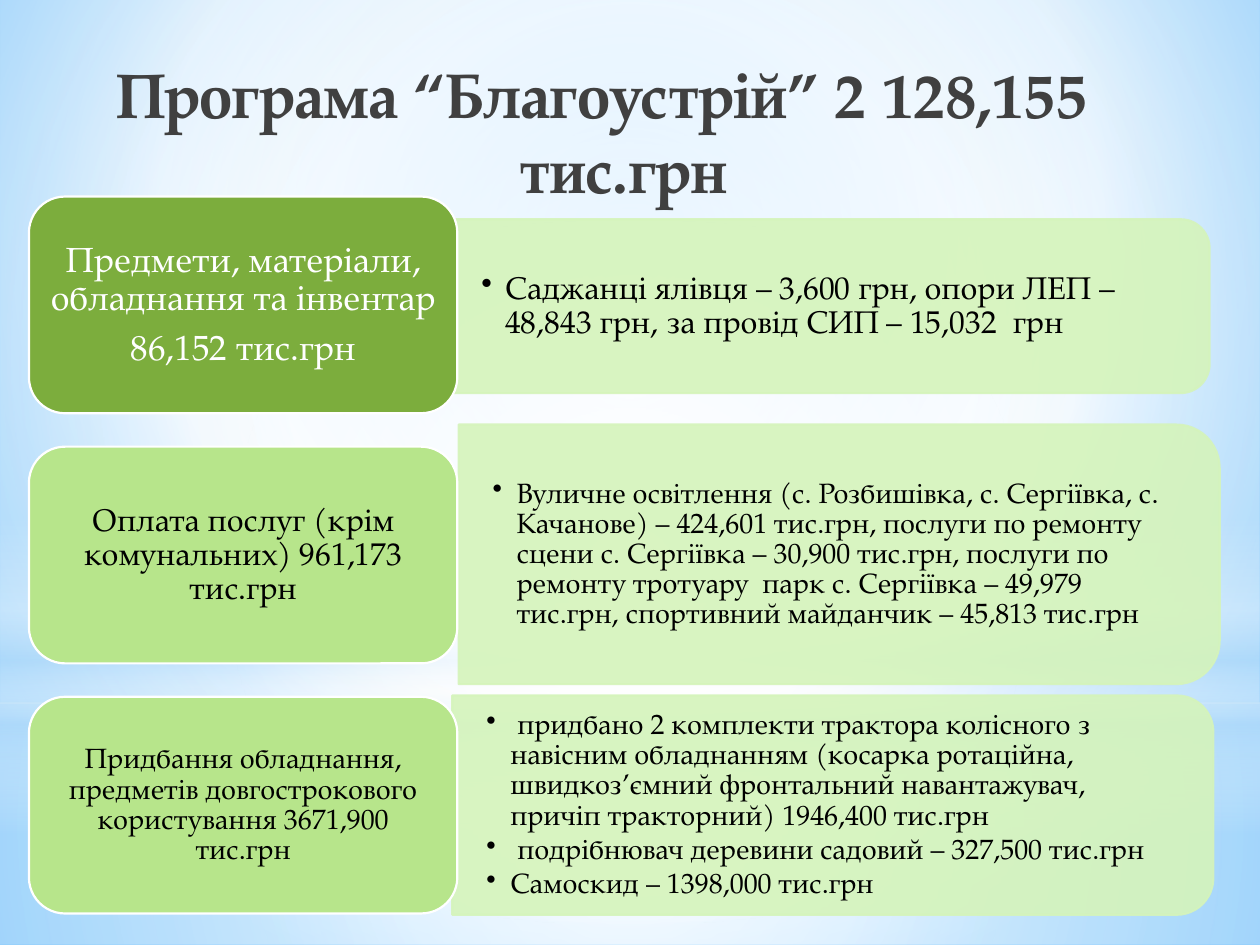
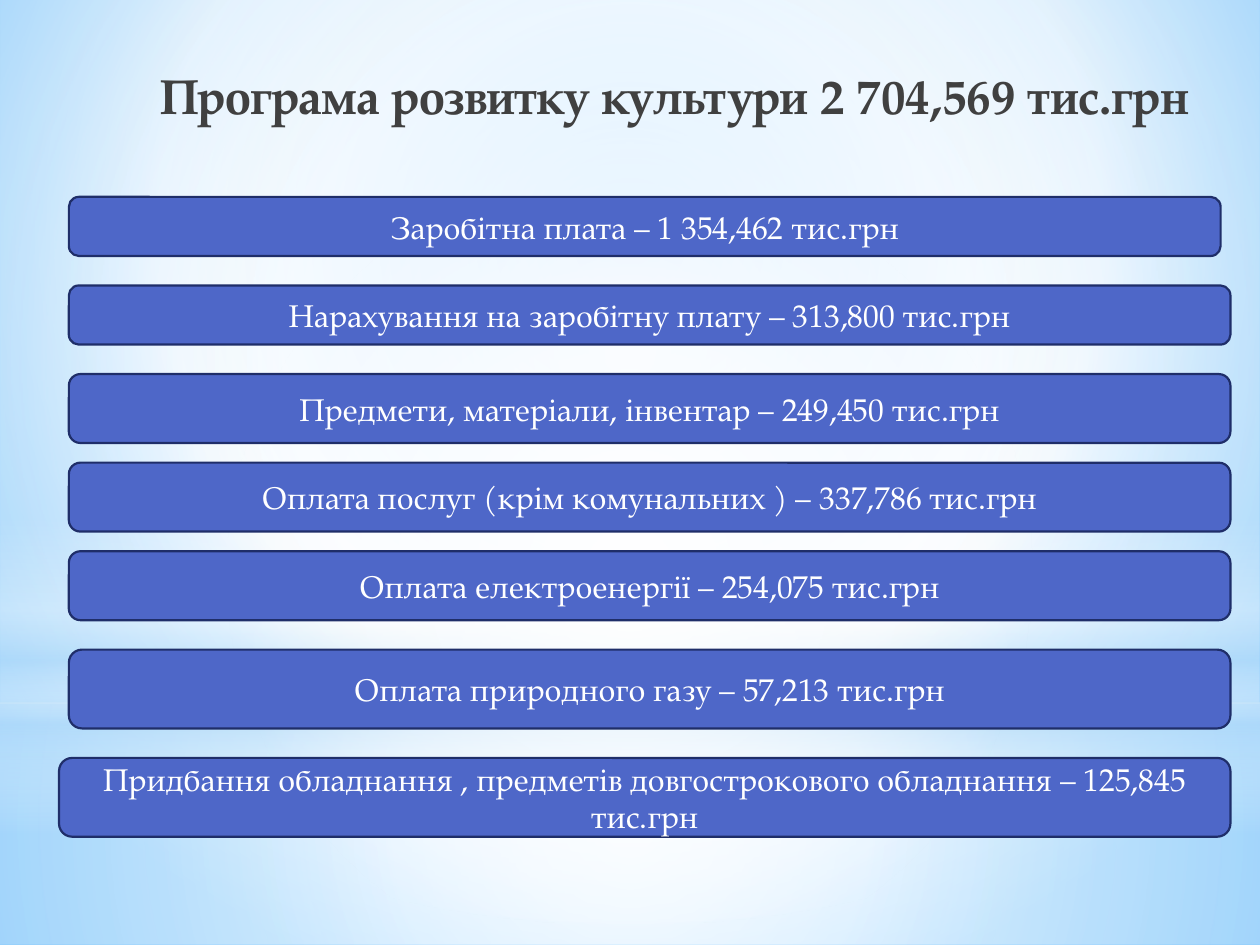
from lxml import etree
from pptx import Presentation
from pptx import util as u
from pptx.dml import color
from pptx.enum import shapes, text
from pptx.oxml import ns

# ---- Content ----
PROGRAM_TITLE = "Програма “Благоустрій” 2 128,155 тис.грн"
# label, label size, label fill, label colour, card (left, top, width, height), card size, bullets
PROGRAM_ROWS = [
    (["Предмети, матеріали, обладнання та інвентар", "86,152 тис.грн"],
     20, "7CAD3D", "FFFFFF", (3.55, 1.74, 6.05, 1.38), 18,
     ["Саджанці ялівця – 3,600 грн, опори ЛЕП – 48,843 грн, за провід СИП – 15,032  грн"]),
    (["Оплата послуг (крім комунальних) 961,173 тис.грн"],
     18, "B7E58B", "000000", (3.64, 3.37, 6.04, 2.06), 16,
     ["Вуличне освітлення (с. Розбишівка, с. Сергіївка, с. Качанове) – 424,601 тис.грн, "
      "послуги по ремонту сцени с. Сергіївка – 30,900 тис.грн, послуги по ремонту "
      "тротуару  парк с. Сергіївка – 49,979 тис.грн, спортивний майданчик – 45,813 тис.грн"]),
    (["Придбання обладнання, предметів довгострокового користування 3671,900 тис.грн"],
     16, "B7E58B", "000000", (3.59, 5.52, 6.04, 1.74), 16,
     [" придбано 2 комплекти трактора колісного з навісним обладнанням (косарка ротаційна, "
      "швидкоз’ємний фронтальний навантажувач, причіп тракторний) 1946,400 тис.грн",
      " подрібнювач деревини садовий – 327,500 тис.грн",
      "Самоскид – 1398,000 тис.грн"]),
]

CULTURE_TITLE = "Програма розвитку культури 2 704,569 тис.грн"
# text, then left, top, right and height in grid cells
CULTURE_BARS = [
    ("Заробітна плата – 1 354,462 тис.грн", 7, 20, 124, 6),
    ("Нарахування на заробітну плату – 313,800 тис.грн", 7, 29, 125, 6),
    ("Предмети, матеріали, інвентар – 249,450 тис.грн", 7, 38, 125, 7),
    ("Оплата послуг (крім комунальних ) – 337,786 тис.грн", 7, 47, 125, 7),
    ("Оплата електроенергії – 254,075 тис.грн", 7, 56, 125, 7),
    ("Оплата природного газу – 57,213 тис.грн", 7, 66, 125, 8),
    ("Придбання обладнання , предметів довгострокового обладнання – 125,845 тис.грн",
     6, 77, 125, 8),
]

# ---- Shared look ----
WIDTH, HEIGHT = 10, 7.5
CELL = WIDTH / 128
FONT = "TeX Gyre Pagella"
TITLE_COLOR, CARD_COLOR, WHITE = "404040", "D5F4BB", "FFFFFF"
BAR_COLOR, BAR_LINE = "4E67C8", "1F2E69"
LABEL_BOX, LABEL_STEP = (0.23, 1.56, 3.4, 1.72), 1.985
CENTER, RIGHT, LEFT = text.PP_ALIGN.CENTER, text.PP_ALIGN.RIGHT, text.PP_ALIGN.LEFT
KIND = shapes.MSO_SHAPE

# Gradient stops are (position, colour, opacity) in percent
PAGE_STOPS = [(0, "9ED5FF", 100), (60, WHITE, 100), (100, "5BB9FF", 100)]
PAGE_FOCUS, MIDDLE = (20, 10, 20, 60), (50, 50, 50, 50)
BACKDROP = [
    (KIND.RECTANGLE, (0, 5.58, WIDTH, 1.92), MIDDLE,
     [(0, WHITE, 91), (37, WHITE, 76), (100, "B4DCFA", 79)]),
    (KIND.RECTANGLE, (0, 0, WIDTH, 5.58), MIDDLE,
     [(0, WHITE, 89), (48, WHITE, 62), (100, "B4DCFA", 79)]),
    (KIND.RECTANGLE, (0, 4.12, WIDTH, 2.5), None,
     [(0, WHITE, 0), (29, WHITE, 30), (45, "B4DCFA", 40), (55, WHITE, 26),
      (65, "B4DCFA", 60), (100, WHITE, 0)]),
    (KIND.OVAL, (0, 1.75, WIDTH, 5.58), MIDDLE, [(0, WHITE, 100), (56, WHITE, 0)]),
]


def inches(box):
    return [u.Inches(v) for v in box]


def add(parent, tag, **attrs):
    return etree.SubElement(parent, ns.qn(tag), {k: str(v) for k, v in attrs.items()})


def paint(fill, hex_color, opacity=100):
    fill.solid()
    fill.fore_color.rgb = color.RGBColor.from_string(hex_color)
    if opacity < 100:
        for clr in fill._xPr.iter(ns.qn("a:srgbClr")):
            add(clr, "a:alpha", val=opacity * 1000)


def gradient(parent, stops, focus):
    """Swap the empty fill of parent for a gradient: circular, or top-down without focus."""
    empty = parent.find(ns.qn("a:noFill"))
    grad = etree.Element(ns.qn("a:gradFill"), rotWithShape="1")
    stop_list = add(grad, "a:gsLst")
    for pos, hex_color, opacity in stops:
        clr = add(add(stop_list, "a:gs", pos=pos * 1000), "a:srgbClr", val=hex_color)
        add(clr, "a:alpha", val=opacity * 1000)
    if focus:
        sides = {k: v * 1000 for k, v in zip("ltrb", focus)}
        add(add(grad, "a:path", path="circle"), "a:fillToRect", **sides)
    else:
        add(grad, "a:lin", ang=90 * 60000, scaled=0)
    parent.replace(empty, grad)


def add_shape(s, kind, box, fill=None, line=None, opacity=100):
    sp = s.shapes.add_shape(kind, *inches(box))
    sp.shadow.inherit = False
    if fill:
        paint(sp.fill, fill, opacity)
    else:
        sp.fill.background()
    if line:
        sp.line.width = u.Pt(1.25)
        paint(sp.line.fill, line, opacity)
    else:
        sp.line.fill.background()
    return sp


def write(sp, lines, size, hex_color, align=CENTER, bold=False, anchor="MIDDLE",
          inset=(0.1, 0.05), spacing=1.0, after=0.0, hang=0.0, bullet=None):
    tf = sp.text_frame
    frame = {"word_wrap": True, "vertical_anchor": text.MSO_ANCHOR[anchor],
             "margin_left": u.Inches(inset[0]), "margin_right": u.Inches(inset[0]),
             "margin_top": u.Inches(inset[1]), "margin_bottom": u.Inches(inset[1])}
    for name, value in frame.items():
        setattr(tf, name, value)
    for i, line in enumerate(lines):
        p = tf.add_paragraph() if i else tf.paragraphs[0]
        for name, value in {"alignment": align, "line_spacing": spacing,
                            "space_after": u.Pt(size * after)}.items():
            setattr(p, name, value)
        pPr = p._p.get_or_add_pPr()
        if hang:
            pPr.set("marL", str(u.Inches(hang)))
            pPr.set("indent", str(-u.Inches(hang)))
        if bullet:
            add(pPr, "a:buChar", char=bullet)
        r = p.add_run()
        r.text = line
        for name, value in {"name": FONT, "size": u.Pt(size), "bold": bold}.items():
            setattr(r.font, name, value)
        paint(r.font.fill, hex_color)


def add_text(s, box, lines, size, hex_color, **style):
    write(s.shapes.add_textbox(*inches(box)), lines, size, hex_color, **style)


def add_title(s, box, title, size, align):
    add_text(s, box, [title], size, TITLE_COLOR, align=align, bold=True,
             anchor="TOP", hang=0.35)


def dress_master(master, s):
    """Give the master its background and the soft light shapes, drawn on s first."""
    master.background.fill.background()
    gradient(master.element.find(".//" + ns.qn("p:bgPr")), PAGE_STOPS, PAGE_FOCUS)
    tree = master.shapes._spTree
    for i, (kind, box, focus, stops) in enumerate(BACKDROP):
        sp = add_shape(s, kind, box)
        gradient(sp._element.spPr, stops, focus)
        sp._element.nvSpPr.cNvPr.set("id", str(20 + i))
        tree.insert(2 + i, sp._element)


def program_slide(s):
    add_title(s, (0.47, 0.39, 8.61, 1.33), PROGRAM_TITLE, 36, CENTER)
    for i, row in enumerate(PROGRAM_ROWS):
        label, label_size, label_fill, label_color, card, card_size, bullets = row
        # Card: a shape turned by 90 degrees around its centre
        x, y, w, h = card
        turned = (x + (w - h) / 2, y + (h - w) / 2, h, w)
        sp = add_shape(s, KIND.ROUND_2_SAME_RECTANGLE, turned, CARD_COLOR, CARD_COLOR, 90)
        sp.rotation = 90
        add_text(s, (x, y + 0.05 * h, w - 0.05 * h, 0.9 * h), bullets, card_size, "000000",
                 align=LEFT, inset=(0.27, 0.14), spacing=0.9, after=0.15,
                 hang=0.19, bullet="•")
        # Label on the left
        x, y, w, h = LABEL_BOX
        y += i * LABEL_STEP
        add_shape(s, KIND.ROUNDED_RECTANGLE, (x, y, w, h), label_fill, WHITE)
        pad = 0.05 * h
        add_text(s, (x + pad, y + pad, w - 2 * pad, h - 2 * pad), label, label_size,
                 label_color, inset=(0.08, 0.04), spacing=0.9, after=0.35)


def culture_slide(s):
    add_title(s, (0.31, 0.47, 9.22, 0.7), CULTURE_TITLE, 28, RIGHT)
    for line, left, top, right, rows in CULTURE_BARS:
        box = [n * CELL for n in (left, top, right - left, rows)]
        sp = add_shape(s, KIND.ROUNDED_RECTANGLE, box, BAR_COLOR, BAR_LINE)
        write(sp, [line], 18, WHITE)


def main():
    prs = Presentation()
    prs.slide_width, prs.slide_height = inches((WIDTH, HEIGHT))
    blank = prs.slide_layouts[6]
    program, culture = (prs.slides.add_slide(blank) for _ in range(2))
    dress_master(prs.slide_master, program)
    program_slide(program)
    culture_slide(culture)
    prs.save("out.pptx")


if __name__ == "__main__":
    main()
